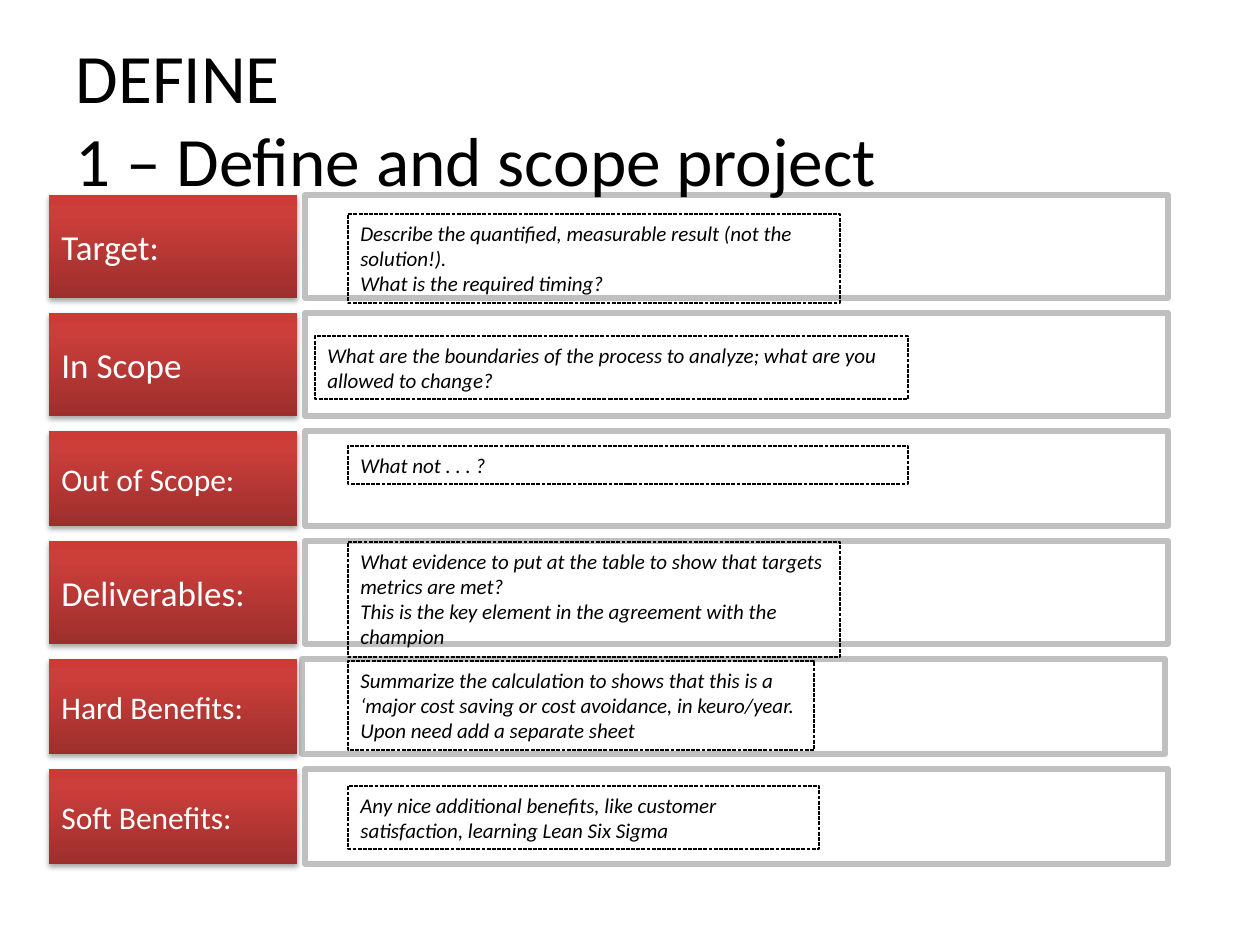
"""Build the DEFINE slide: six labelled rows with guidance notes for scoping a project."""
from copy import deepcopy

from lxml.etree import SubElement
from pptx import Presentation
from pptx.dml.color import RGBColor
from pptx.enum.dml import MSO_LINE
from pptx.enum.shapes import MSO_SHAPE
from pptx.enum.text import MSO_ANCHOR, MSO_AUTO_SIZE, PP_ALIGN
from pptx.oxml.ns import qn
from pptx.util import Pt

PX = 914400 / 126
ROW_TOP, ROW_GAP = 195, 15
LABEL_LEFT, LABEL_WIDTH = 49, 248
FRAME_WIDTH = 863
GRADIENT = [(0, "9C2F2D"), (0.8, "CB3E3A"), (1, "CE3B37")]

# label, label size, row height, frame left, note box, note paragraphs
ROWS = [
    ("Target:", 20, 103, 305, (348, 214, 492, 89),
     ["Describe the quantified, measurable result (not the solution!).",
      "What is the required timing?"]),
    ("In Scope", 20, 103, 305, (315, 336, 593, 63),
     ["What are the boundaries of the process to analyze; what are you allowed to change?"]),
    ("Out of Scope:", 18, 95, 305, (348, 446, 560, 38),
     ["What not . . . ?"]),
    ("Deliverables:", 20, 103, 305, (348, 542, 492, 115),
     ["What evidence to put at the table to show that targets metrics are met?",
      "This is the key element in the agreement with the champion"]),
    ("Hard Benefits:", 18, 95, 302, (348, 661, 466, 89),
     ["Summarize the calculation to shows that this is a ‘major cost saving or cost "
      "avoidance, in keuro/year. Upon need add a separate sheet"]),
    ("Soft Benefits:", 18, 95, 305, (348, 786, 471, 63),
     ["Any nice additional benefits, like customer satisfaction, learning Lean Six Sigma"]),
]


def color(value):
    return RGBColor.from_string(value)


def add_box(left, top, width, height, paragraphs=(), size=12, ink="000000", italic=False):
    box = slide.shapes.add_shape(
        MSO_SHAPE.RECTANGLE, *(round(n * PX) for n in (left, top, width, height)))
    box.shadow.inherit = False
    if paragraphs:
        box.text_frame.text = "\n".join(paragraphs)
        box.text_frame.word_wrap = True
    for paragraph in box.text_frame.paragraphs:
        paragraph.alignment = PP_ALIGN.LEFT
        paragraph.font.name = "Calibri"
        paragraph.font.size = Pt(size)
        paragraph.font.italic = italic
        paragraph.font.color.rgb = color(ink)
    return box


prs = Presentation()
prs.slide_width, prs.slide_height = round(1260 * PX), round(945 * PX)
slide = prs.slides.add_slide(prs.slide_layouts[5])

tops = [ROW_TOP + sum(row[2] + ROW_GAP for row in ROWS[:i]) for i in range(len(ROWS))]

for top, (_, _, height, frame_left, _, _) in zip(tops, ROWS):
    frame = add_box(frame_left, top, FRAME_WIDTH, height)
    frame.fill.solid()
    frame.fill.fore_color.rgb = color("FFFFFF")
    frame.line.color.rgb = color("C0C0C0")
    frame.line.width = Pt(3)

title = slide.shapes.title
slide.shapes._spTree.append(title._element)
title.left, title.top, title.width, title.height = (round(n * PX) for n in (63, 38, 1134, 158))
title.text_frame.vertical_anchor = MSO_ANCHOR.MIDDLE
heading = title.text_frame.paragraphs[0]
heading.add_run().text = "DEFINE"
heading.add_line_break()
heading.add_run().text = "1 – Define and scope project"
heading.alignment = PP_ALIGN.LEFT
heading.font.name = "Calibri"
heading.font.size = Pt(39.6)
heading.font.color.rgb = color("000000")

for top, (caption, size, height, _, _, _) in zip(tops, ROWS):
    label = add_box(LABEL_LEFT, top, LABEL_WIDTH, height, [caption], size, "FFFFFF")
    label.text_frame.vertical_anchor = MSO_ANCHOR.MIDDLE
    label.line.fill.background()
    label.fill.gradient()
    label.fill.gradient_angle = 90
    stop_list = label._element.spPr.find(".//" + qn("a:gsLst"))
    stop_list.append(deepcopy(stop_list[0]))
    for stop, (position, shade) in zip(label.fill.gradient_stops, GRADIENT):
        stop.position = position
        stop.color.rgb = color(shade)
    effects = label._element.spPr.find(qn("a:effectLst"))
    shadow = SubElement(effects, qn("a:outerShdw"), blurRad="40000", dist="23000",
                        dir="5400000", rotWithShape="0")
    shadow_color = SubElement(shadow, qn("a:srgbClr"), val="000000")
    SubElement(shadow_color, qn("a:alpha"), val="35000")

for _, _, _, _, note_box, guidance in ROWS:
    note = add_box(*note_box, guidance, italic=True)
    note.text_frame.vertical_anchor = MSO_ANCHOR.TOP
    note.text_frame.auto_size = MSO_AUTO_SIZE.SHAPE_TO_FIT_TEXT
    note.fill.background()
    note.line.color.rgb = color("000000")
    note.line.width = Pt(0.75)
    note.line.dash_style = MSO_LINE.SQUARE_DOT

prs.save("out.pptx")
